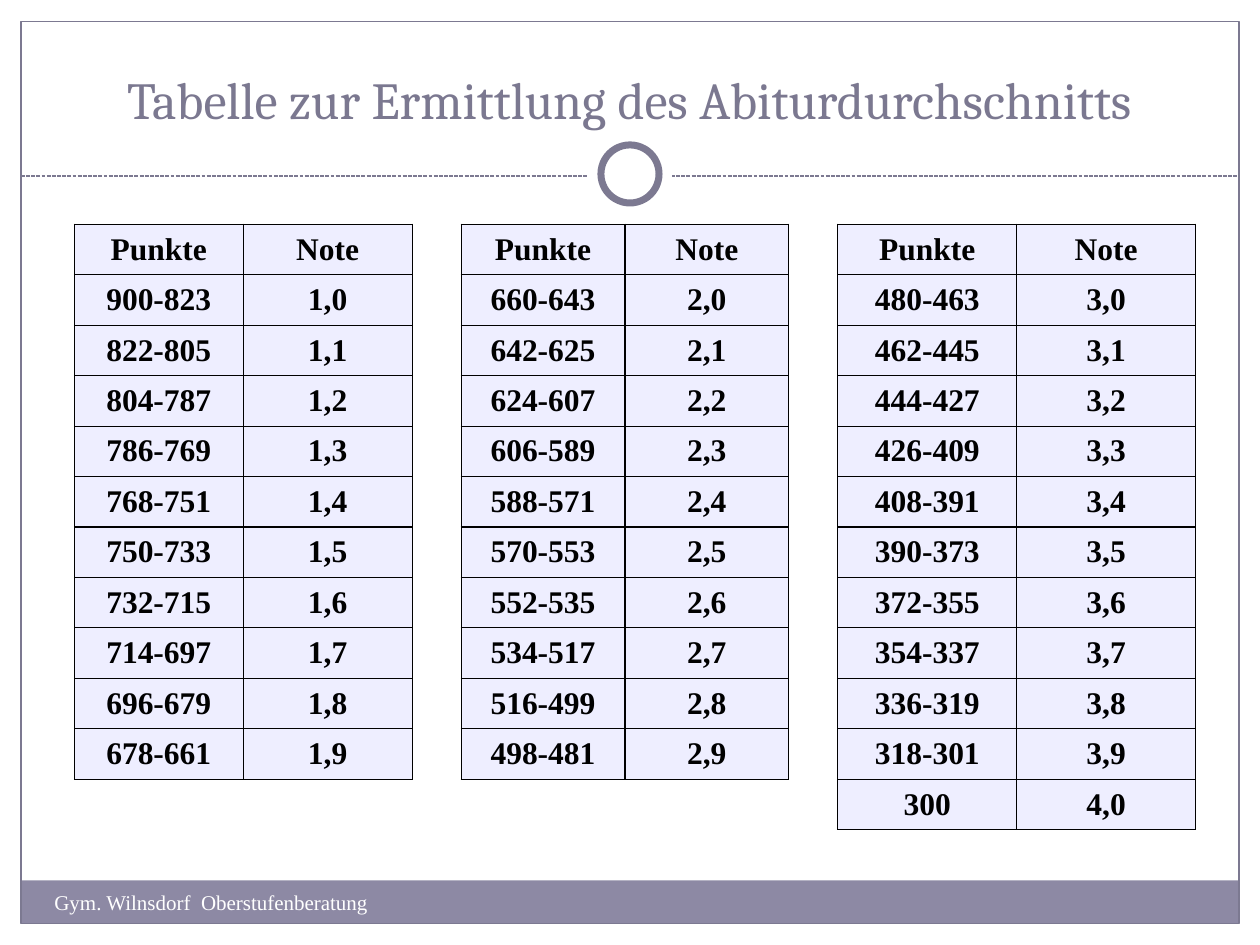
from dataclasses import dataclass

from lxml import etree
from pptx import Presentation
from pptx import util as u
from pptx.dml import color
from pptx.enum import dml, shapes, text
from pptx.oxml import ns

ACCENT, BAND, WHITE, BLACK, CELL = "7C7991", "8D89A4", "FFFFFF", "000000", "EEEEFF"
SERIF = "Times New Roman"
TABLE_TOP, ROW_HEIGHT = 128.16, 28.8
MAX_POINTS, BEST_LIMIT, STEP, PASS_POINTS, PASS_STEP = 900, 823, 18, 300, 30


@dataclass(frozen=True)
class GradeTable:
    """Place of one grade table and the tenths of a grade it covers."""
    left: float
    column_width: float
    first_step: int
    steps: int


@dataclass(frozen=True)
class Ornament:
    """Preset shape of the slide frame."""
    kind: shapes.MSO_SHAPE
    box: tuple[float, float, float, float]
    fill: str | None = None
    line: str | None = None
    weight: float = 0


GRADE_TABLES = (
    GradeTable(42.5, 96.5, 0, 10),
    GradeTable(263.5, 93.6, 10, 10),
    GradeTable(478.8, 102.2, 20, 11),
)
FRAME = (
    Ornament(shapes.MSO_SHAPE.RECTANGLE, (11.75, 503.1, 695.75, 24.5), fill=BAND),
    Ornament(shapes.MSO_SHAPE.RECTANGLE, (12, 12.2, 696, 515.5), line=ACCENT, weight=0.75),
)
RING = (
    Ornament(shapes.MSO_SHAPE.OVAL, (336, 75.6, 48, 48), fill=WHITE),
    Ornament(shapes.MSO_SHAPE.OVAL, (343.4, 82.8, 33.2, 33.2), WHITE, ACCENT, 4),
)


def rgb(value: str) -> color.RGBColor:
    """Turn a hex string into a colour."""
    return color.RGBColor.from_string(value)


def write(frame, words: str, *, size: float, font: str = SERIF, ink: str = BLACK,
          bold: bool = False, align=text.PP_ALIGN.LEFT) -> None:
    """Fill a text frame with one formatted paragraph."""
    paragraph = frame.paragraphs[0]
    paragraph.alignment = align
    run = paragraph.add_run()
    run.text = words
    run.font.size, run.font.name, run.font.bold = u.Pt(size), font, bold
    run.font.color.rgb = rgb(ink)


def add_label(slide, box: tuple, words: str, anchor, **style) -> None:
    """Add a wrapping text box."""
    frame = slide.shapes.add_textbox(*map(u.Pt, box)).text_frame
    frame.word_wrap = True
    frame.vertical_anchor = anchor
    write(frame, words, **style)


def add_ornament(slide, ornament: Ornament) -> None:
    """Draw one preset shape without shadow."""
    shape = slide.shapes.add_shape(ornament.kind, *map(u.Pt, ornament.box))
    shape.shadow.inherit = False
    if ornament.fill:
        shape.fill.solid()
        shape.fill.fore_color.rgb = rgb(ornament.fill)
    else:
        shape.fill.background()
    if ornament.line:
        shape.line.color.rgb = rgb(ornament.line)
        shape.line.width = u.Pt(ornament.weight)
    else:
        shape.line.fill.background()


def add_divider(slide, left: float, right: float, top: float) -> None:
    """Draw the dashed line below the title."""
    divider = slide.shapes.add_connector(
        shapes.MSO_CONNECTOR.STRAIGHT, *map(u.Pt, (left, top, right, top)))
    divider.line.color.rgb = rgb(ACCENT)
    divider.line.width = u.Pt(0.75)
    divider.line.dash_style = dml.MSO_LINE.SQUARE_DOT
    etree.SubElement(divider._element.spPr, ns.qn("a:effectLst"))


def border_cell(cell, ink: str, weight: float) -> None:
    """Outline a cell on all four sides."""
    properties = cell._tc.get_or_add_tcPr()
    for side in ("lnL", "lnR", "lnT", "lnB"):
        edge = etree.SubElement(properties, ns.qn(f"a:{side}"), w=str(u.Pt(weight)))
        fill = etree.SubElement(edge, ns.qn("a:solidFill"))
        etree.SubElement(fill, ns.qn("a:srgbClr"), val=ink)


def grade_row(step: int) -> tuple[str, str]:
    """Give the point range and grade that lie some tenths below 1,0."""
    lower = BEST_LIMIT - STEP * step
    upper = lower + STEP - 1 if step else MAX_POINTS
    points = str(PASS_POINTS) if step == PASS_STEP else f"{upper}-{lower}"
    return points, f"{1 + step // 10},{step % 10}"


def add_grade_table(slide, part: GradeTable) -> None:
    """Add one table of point ranges and grades."""
    steps = range(part.first_step, part.first_step + part.steps)
    rows = [("Punkte", "Note"), *map(grade_row, steps)]
    box = (part.left, TABLE_TOP, 2 * part.column_width, ROW_HEIGHT * len(rows))
    table = slide.shapes.add_table(len(rows), 2, *map(u.Pt, box)).table
    table.first_row = table.horz_banding = False
    for column in table.columns:
        column.width = u.Pt(part.column_width)
    for row, entries in zip(table.rows, rows):
        row.height = u.Pt(ROW_HEIGHT)
        for cell, entry in zip(row.cells, entries):
            border_cell(cell, BLACK, 0.75)
            cell.fill.solid()
            cell.fill.fore_color.rgb = rgb(CELL)
            cell.vertical_anchor = text.MSO_ANCHOR.MIDDLE
            write(cell.text_frame, entry, size=18, bold=True, align=text.PP_ALIGN.CENTER)


def main() -> None:
    """Build and save the slide."""
    deck = Presentation()
    deck.slide_width, deck.slide_height = u.Pt(720), u.Pt(540)
    slide = deck.slides.add_slide(deck.slide_layouts[6])
    for ornament in FRAME:
        add_ornament(slide, ornament)
    add_divider(slide, 12, 708, 100.6)
    for ornament in RING:
        add_ornament(slide, ornament)
    add_label(slide, (24, 18, 672, 60), "Tabelle zur Ermittlung des Abiturdurchschnitts",
              text.MSO_ANCHOR.BOTTOM, size=29.7, font="Cambria", ink="7B7890",
              align=text.PP_ALIGN.CENTER)
    for part in GRADE_TABLES:
        add_grade_table(slide, part)
    add_label(slide, (24, 504.7, 282, 28.8), "Gym. Wilnsdorf  Oberstufenberatung",
              text.MSO_ANCHOR.TOP, size=12, ink=WHITE)
    deck.save("out.pptx")


if __name__ == "__main__":
    main()
